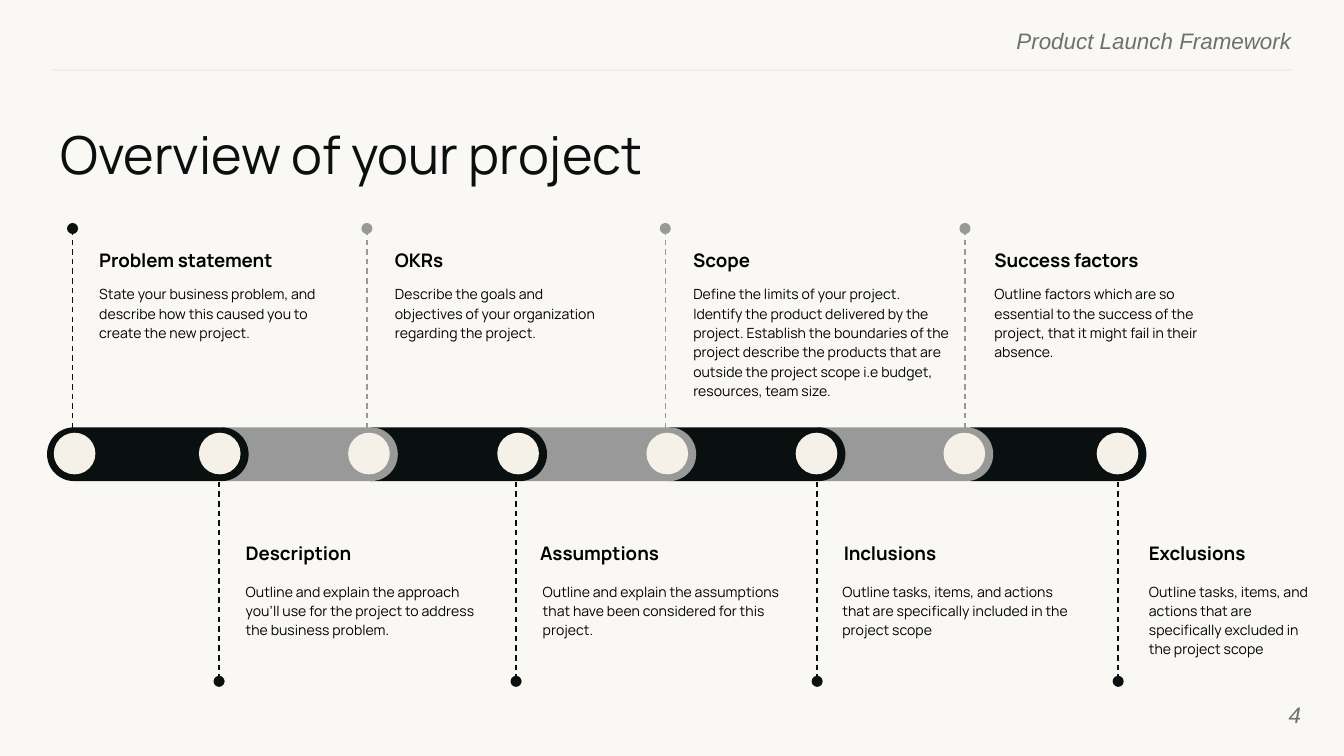
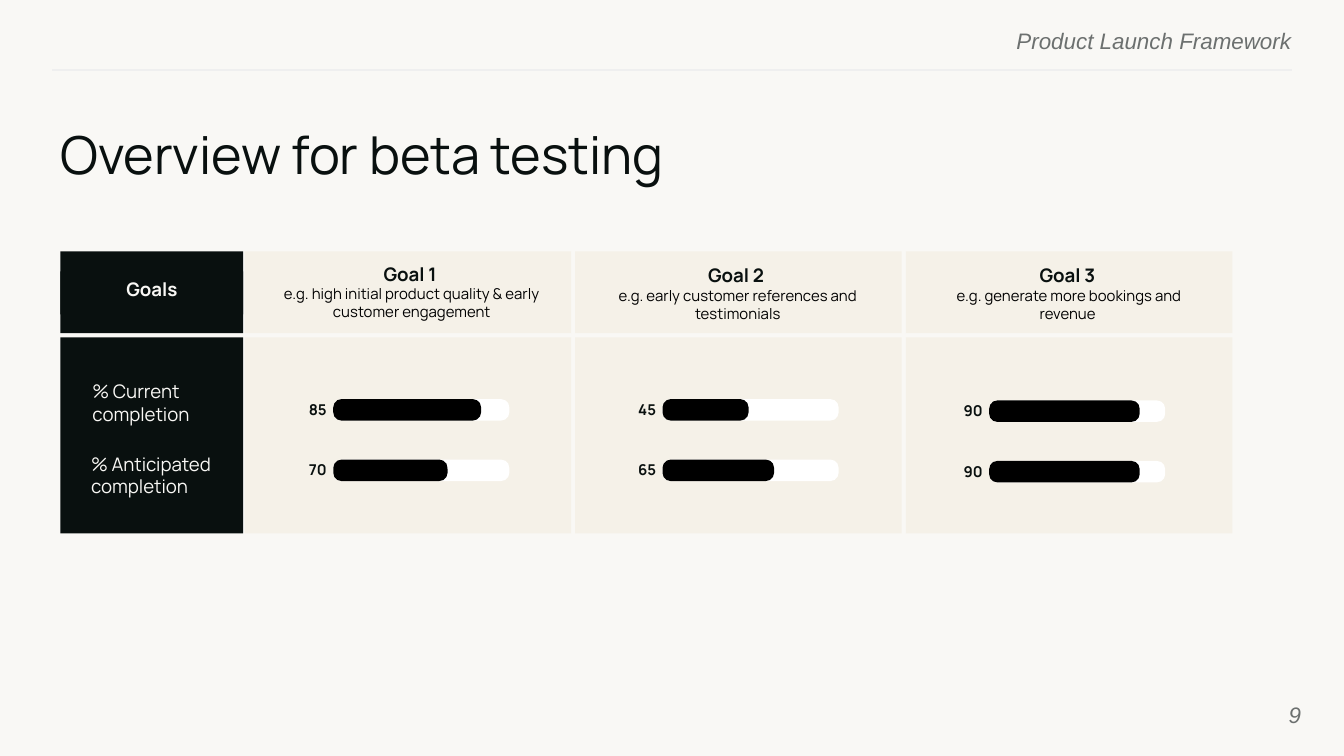
import pptx
import pptx.util
import pptx.dml.color
import pptx.enum.dml
import pptx.enum.shapes
import pptx.enum.text
import pptx.oxml.ns
import lxml.etree

Inches = pptx.util.Inches
Shape = pptx.enum.shapes.MSO_SHAPE
Align = pptx.enum.text.PP_ALIGN
Anchor = pptx.enum.text.MSO_ANCHOR
qn = pptx.oxml.ns.qn
rgb = pptx.dml.color.RGBColor.from_string


class Theme:
    paper = "F9F8F5"
    ink = "09100F"
    black = "000000"
    white = "FFFFFF"
    gray = "999999"
    cream = "F5F1E8"
    rule = "EFEFEF"
    hairline = 0.75
    running = ("Arial", 12, "6C706F", False, True)
    title = ("Manrope", 28, ink, False, False)
    heading = ("Manrope", 10, black, True, False)
    body = ("Manrope", 7.5, black, False, False)
    goal = ("Manrope", 10, ink, True, False)
    example = ("Manrope", 8, black, False, False)
    value = ("Manrope", 8, ink, True, False)
    corner = ("Manrope", 10, paper, True, False)
    row_label = ("Manrope", 10, paper, False, False)


def paint(slide, kind, box, fill):
    part = slide.shapes.add_shape(kind, *map(Inches, box))
    part.shadow.inherit = False
    part.fill.solid()
    part.fill.fore_color.rgb = rgb(fill)
    part.line.fill.background()
    return part


def write(slide, box, lines, align=Align.LEFT, anchor=Anchor.TOP, inset=True, leading=None, after=None, fill=None):
    if fill:
        frame = paint(slide, Shape.RECTANGLE, box, fill).text_frame
    else:
        frame = slide.shapes.add_textbox(*map(Inches, box)).text_frame
    frame.word_wrap = True
    frame.vertical_anchor = anchor
    if not inset:
        frame.margin_left = frame.margin_right = frame.margin_top = frame.margin_bottom = 0
    for number, (text, style) in enumerate(lines):
        paragraph = frame.add_paragraph() if number else frame.paragraphs[0]
        paragraph.text = text
        paragraph.alignment = align
        paragraph.line_spacing = leading
        paragraph.space_after = after
        font = paragraph.font
        font.name, size, colour, font.bold, font.italic = style
        font.size = pptx.util.Pt(size)
        font.color.rgb = rgb(colour)


stages = [
    ("Problem statement",
     "State your business problem, and describe how this caused you to create the new project.",
     0.54, 0.4, (0.64, 1.8, 1.87, 0.44), (0.64, 2.06, 1.9, 0.73)),
    ("Description",
     "Outline and explain the approach you’ll use for the project to address the business problem.",
     1.63, 1.48, (1.73, 3.98, 1.2, 0.44), (1.73, 4.27, 1.97, 0.61)),
    ("OKRs",
     "Describe the goals and objectives of your organization regarding the project.",
     2.73, 2.59, (2.84, 1.8, 1.59, 0.44), (2.84, 2.06, 1.82, 0.73)),
    ("Assumptions",
     "Outline and explain the assumptions that have been considered for this project.",
     3.84, 3.7, (3.92, 3.98, 1.26, 0.44), (3.94, 4.27, 2.04, 0.69)),
    ("Scope",
     "Define the limits of your project. Identify the product delivered by the project. "
     "Establish the boundaries of the project describe the products that are outside "
     "the project scope i.e budget, resources, team size.",
     4.95, 4.81, (5.06, 1.8, 1.9, 0.27), (5.06, 2.06, 2.12, 1)),
    ("Inclusions",
     "Outline tasks, items, and actions that are specifically included in the project scope",
     6.08, 5.92, (6.18, 3.98, 1.24, 0.44), (6.17, 4.27, 1.9, 0.61)),
    ("Success factors",
     "Outline factors which are so essential to the success of the project, "
     "that it might fail in their absence.",
     7.18, 7.02, (7.3, 1.8, 2.07, 0.27), (7.3, 2.06, 1.78, 0.61)),
    ("Exclusions",
     "Outline tasks, items, and actions that are specifically excluded in the project scope",
     8.32, 8.16, (8.45, 3.98, 1.44, 0.44), (8.45, 4.27, 1.45, 0.61)),
]
dot_lefts = [stage[3] for stage in stages]

stems = []
for index, stage in enumerate(stages):
    start, end = (3.37, 5.07) if index % 2 else (3.4, 1.7)
    colour = Theme.gray if index and index % 2 == 0 else Theme.ink
    stems.append((stage[2], start, stage[2], end, colour, True))

deck = pptx.Presentation()
deck.slide_width = Inches(10)
deck.slide_height = deck.slide_width * 9 // 16

slides = []
for title, page, slide_stems in [
    ("Overview of your project", "4", stems),
    ("Overview for beta testing", "9", []),
]:
    slide = deck.slides.add_slide(deck.slide_layouts[6])
    slide.background.fill.solid()
    slide.background.fill.fore_color.rgb = rgb(Theme.paper)
    write(slide, (5.76, 0.2, 3.85, 0.18), [("Product Launch Framework", Theme.running)], Align.RIGHT, inset=False)
    for x1, y1, x2, y2, colour, is_stem in [(9.61, 0.52, 0.39, 0.52, Theme.rule, False)] + slide_stems:
        line = slide.shapes.add_connector(
            pptx.enum.shapes.MSO_CONNECTOR.STRAIGHT, *map(Inches, (x1, y1, x2, y2)))
        line.line.color.rgb = rgb(colour)
        line.line.width = pptx.util.Pt(Theme.hairline)
        properties = line.element.spPr
        if is_stem:
            line.line.dash_style = pptx.enum.dml.MSO_LINE.DASH
            lxml.etree.SubElement(properties.find(qn("a:ln")), qn("a:tailEnd"), type="oval")
        lxml.etree.SubElement(properties, qn("a:effectLst"))
    write(slide, (0.45, 0.91, 9.23, 0.51), [(title, Theme.title)], inset=False, after=pptx.util.Pt(10))
    write(slide, (9.08, 5.1, 0.6, 0.43), [(page, Theme.running)], Align.RIGHT, Anchor.MIDDLE, inset=False)
    slides.append(slide)

project, testing = slides

for heading, text, _, _, heading_box, text_box in stages:
    write(project, heading_box, [(heading, Theme.heading)])
    write(project, text_box, [(text, Theme.body)], leading=1.15)

band_middle, band_height = 3.38, 0.4
for index in range(len(stages) - 1, 0, -1):
    length = 1.5 if index == 1 else 1.31
    center = dot_lefts[index] + 0.37 - length / 2
    box = (center - band_height / 2, band_middle - length / 2, band_height, length)
    segment = paint(project, Shape.ROUND_2_SAME_RECTANGLE, box, Theme.ink if index % 2 else Theme.gray)
    segment.rotation = 90
    segment.adjustments[0] = 0.5
    segment.adjustments[1] = 0.5 if index == 1 else 0

for dot_left in dot_lefts:
    paint(project, Shape.OVAL, (dot_left, 3.22, 0.31, 0.31), Theme.cream)

bands = [(1.87, 0.61), (2.51, 1.46)]
for top, height in bands:
    paint(testing, Shape.RECTANGLE, (0.45, top, 1.36, height), Theme.ink)
write(testing, (0.45, 2.02, 1.36, 0.32), [("Goals", Theme.corner)], Align.CENTER, fill=Theme.ink)
write(testing, (0.59, 2.78, 1.36, 0.37), [("% Current completion", Theme.row_label)])
write(testing, (0.58, 3.32, 1.36, 0.37), [("% Anticipated completion", Theme.row_label)])

goals = [
    ("Goal 1 ", "e.g. high initial product quality & early customer engagement",
     (1.95, 1.92, 2.23, 0.5), 2.48, 2.97, [("85", 1.1), ("70", 0.85)]),
    ("Goal 2 ", "e.g. early customer references and testimonials",
     (4.39, 1.93, 2.2, 0.5), 4.93, 2.97, [("45", 0.64), ("65", 0.83)]),
    ("Goal 3 ", "e.g. generate more bookings and revenue ",
     (6.95, 1.93, 2.01, 0.5), 7.36, 2.98, [("90", 1.12), ("90", 1.12)]),
]
for column, (goal, example, goal_box, bar_left, bar_top, progress) in enumerate(goals):
    for top, height in bands:
        paint(testing, Shape.RECTANGLE, (1.82 + 2.46 * column, top, 2.43, height), Theme.cream)
    write(testing, goal_box, [(goal, Theme.goal), (example, Theme.example)],
          Align.CENTER, Anchor.MIDDLE, fill=Theme.cream)
    for row, (value, done) in enumerate(progress):
        top = bar_top + 0.45 * row
        for length, colour in [(1.31, Theme.white), (done, Theme.black)]:
            bar = paint(testing, Shape.ROUNDED_RECTANGLE, (bar_left, top, length, 0.16), colour)
            bar.adjustments[0] = 0.38
        write(testing, (bar_left - 0.53, top - 0.04, 0.58, 0.24), [(value, Theme.value)], Align.RIGHT)

deck.save("out.pptx")
